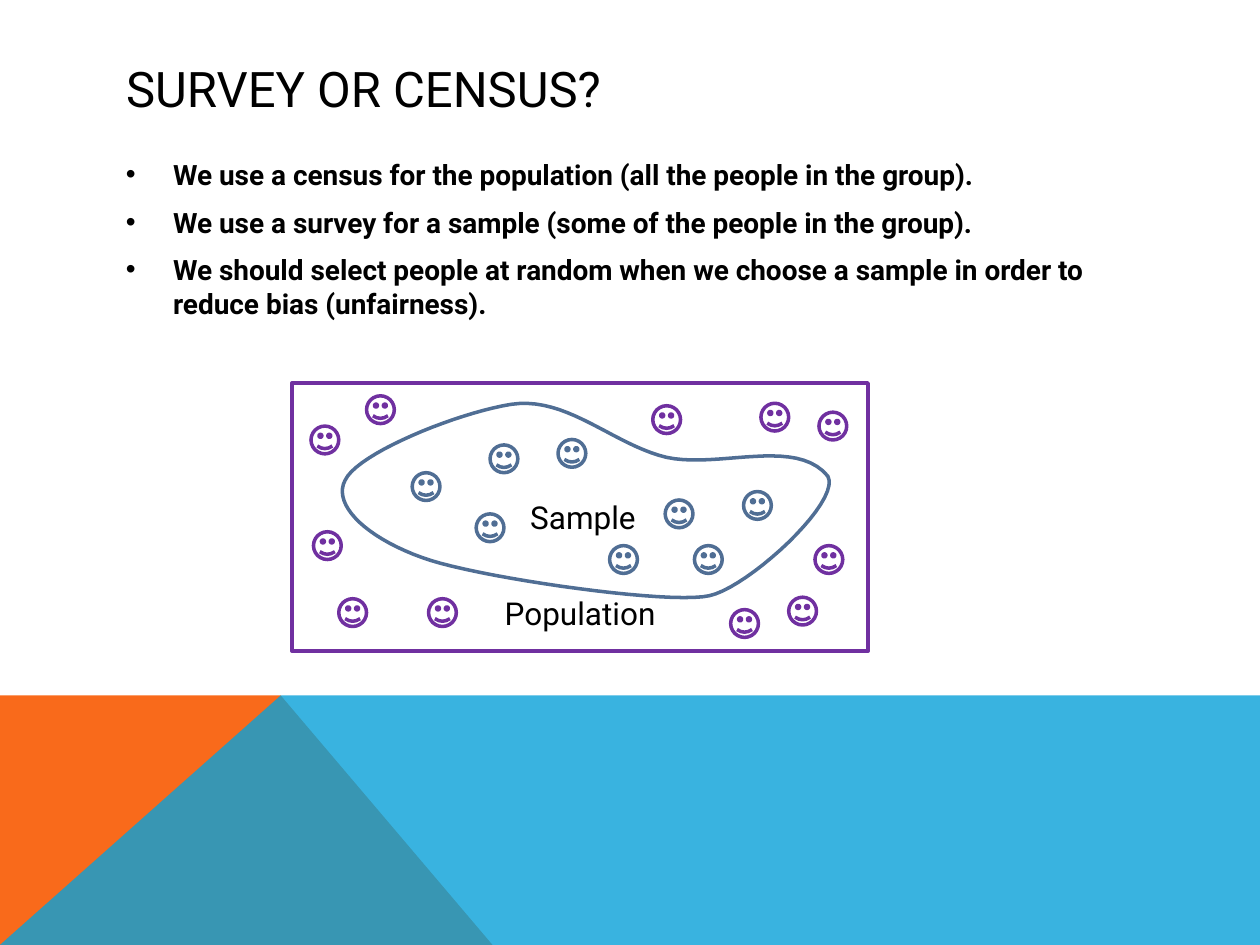
"""Build the slide that contrasts a survey of a sample with a census of a population."""
import lxml.etree
import pptx
import pptx.dml.color
import pptx.enum.shapes
import pptx.enum.text
import pptx.oxml.ns
import pptx.util

Cm = pptx.util.Cm
PURPLE, BLUE, WHITE = "7030A0", "506E94", "FFFFFF"


def color(value):
    return pptx.dml.color.RGBColor.from_string(value)


def style_shape(shape, fill, line=None):
    shape.shadow.inherit = False
    shape.fill.solid()
    shape.fill.fore_color.rgb = color(fill)
    if line:
        shape.line.color.rgb = color(line)
        shape.line.width = pptx.util.Pt(2)
    else:
        shape.line.fill.background()


presentation = pptx.Presentation()
presentation.slide_width, presentation.slide_height = Cm(25.4), Cm(19.05)
slide = presentation.slides.add_slide(presentation.slide_layouts[5])
shapes = slide.shapes

bands = [
    ("F96A1B", [(0, 19.05), (0, 14.02), (5.66, 14.02), (9.93, 19.05)]),
    ("08A1D9", [(0, 19.05), (5.66, 14.02), (25.4, 14.02), (25.4, 19.05)]),
]
for fill, corners in bands:
    points = [(Cm(x), Cm(y)) for x, y in corners]
    builder = shapes.build_freeform(*points[0])
    builder.add_line_segments(points[1:], close=True)
    band = builder.convert_to_shape()
    style_shape(band, fill)
band_color = band.fill._xPr.find(".//" + pptx.oxml.ns.qn("a:srgbClr"))
lxml.etree.SubElement(band_color, pptx.oxml.ns.qn("a:alpha"), val="80000")

title = shapes.title
title.left, title.top, title.width, title.height = Cm(2.29), Cm(1.02), Cm(20.88), Cm(1.52)
body = shapes.add_textbox(Cm(2.29), Cm(3.05), Cm(20.88), Cm(9.93))

population = shapes.add_shape(
    pptx.enum.shapes.MSO_SHAPE.RECTANGLE, Cm(5.89), Cm(7.72), Cm(11.61), Cm(5.41)
)
style_shape(population, WHITE, PURPLE)

outline_start = (6.96, 9.68)
outline_curves = [
    [(7.21, 9.14), (9.19, 8.33), (10.31, 8.15)],
    [(11.43, 7.98), (12.37, 8.97), (13.44, 9.22)],
    [(14.5, 9.45), (16.05, 8.81), (16.69, 9.6)],
    [(16.97, 10.11), (15.09, 11.84), (14.3, 12.01)],
    [(13.51, 12.19), (9.91, 11.68), (8.69, 11.3)],
    [(7.44, 10.9), (6.68, 10.19), outline_start],
]
steps = 20
outline_points = []
current = outline_start
for curve in outline_curves:
    controls = [current, *curve]
    for step in range(1, steps + 1):
        t = step / steps
        weights = [(1 - t) ** 3, 3 * t * (1 - t) ** 2, 3 * t**2 * (1 - t), t**3]
        outline_points.append(
            tuple(Cm(sum(w * p[axis] for w, p in zip(weights, controls))) for axis in (0, 1))
        )
    current = curve[-1]
builder = shapes.build_freeform(Cm(outline_start[0]), Cm(outline_start[1]))
builder.add_line_segments(outline_points[:-1], close=True)
style_shape(builder.convert_to_shape(), WHITE, BLUE)

sample_label = shapes.add_textbox(Cm(10.44), Cm(9.91), Cm(3.25), Cm(1.02))

faces = {
    BLUE: [
        (8.31, 9.53), (9.88, 8.97), (11.25, 8.86), (9.6, 10.36),
        (13.41, 10.08), (14, 11), (12.29, 11), (14.99, 9.91),
    ],
    PURPLE: [
        (15.9, 12.04), (16.43, 11), (14.73, 12.29), (15.34, 8.13),
        (6.83, 12.07), (8.64, 12.07), (6.27, 8.59), (7.39, 7.98),
        (13.16, 8.18), (16.51, 8.31), (6.32, 10.72),
    ],
}
for line, positions in faces.items():
    for left, top in positions:
        face = shapes.add_shape(
            pptx.enum.shapes.MSO_SHAPE.SMILEY_FACE, Cm(left), Cm(top), Cm(0.56), Cm(0.56)
        )
        style_shape(face, WHITE, line)

anchors = pptx.enum.text.MSO_ANCHOR
alignments = pptx.enum.text.PP_ALIGN
bullet_lines = [
    "We use a census for the population (all the people in the group).",
    "We use a survey for a sample (some of the people in the group).",
    "We should select people at random when we choose a sample in order to "
    "reduce bias (unfairness).",
]
texts = [
    (title, ["SURVEY OR CENSUS?"], 28, False, alignments.LEFT, anchors.MIDDLE),
    (body, bullet_lines, 16, True, alignments.LEFT, anchors.TOP),
    (population, ["Population"], 18, False, alignments.CENTER, anchors.BOTTOM),
    (sample_label, ["Sample"], 18, False, alignments.LEFT, anchors.TOP),
]
for shape, lines, size, bold, alignment, anchor in texts:
    frame = shape.text_frame
    frame_format = {
        "word_wrap": True,
        "auto_size": pptx.enum.text.MSO_AUTO_SIZE.NONE,
        "vertical_anchor": anchor,
        "text": "\n".join(lines),
    }
    for name, value in frame_format.items():
        setattr(frame, name, value)
    font_format = {"name": "Roboto", "size": pptx.util.Pt(size), "bold": bold}
    for paragraph in frame.paragraphs:
        paragraph.alignment = alignment
        font = paragraph.runs[0].font
        for name, value in font_format.items():
            setattr(font, name, value)
        font.color.rgb = color("000000")
population.text_frame.margin_bottom = Cm(0.4)

for paragraph in body.text_frame.paragraphs:
    paragraph.space_before = pptx.util.Pt(8)
    properties = paragraph._p.get_or_add_pPr()
    properties.set("marL", str(Cm(0.95)))
    properties.set("indent", str(-Cm(0.95)))
    lxml.etree.SubElement(properties, pptx.oxml.ns.qn("a:buFont"), typeface="Arial")
    lxml.etree.SubElement(properties, pptx.oxml.ns.qn("a:buChar"), char="•")

presentation.save("out.pptx")
